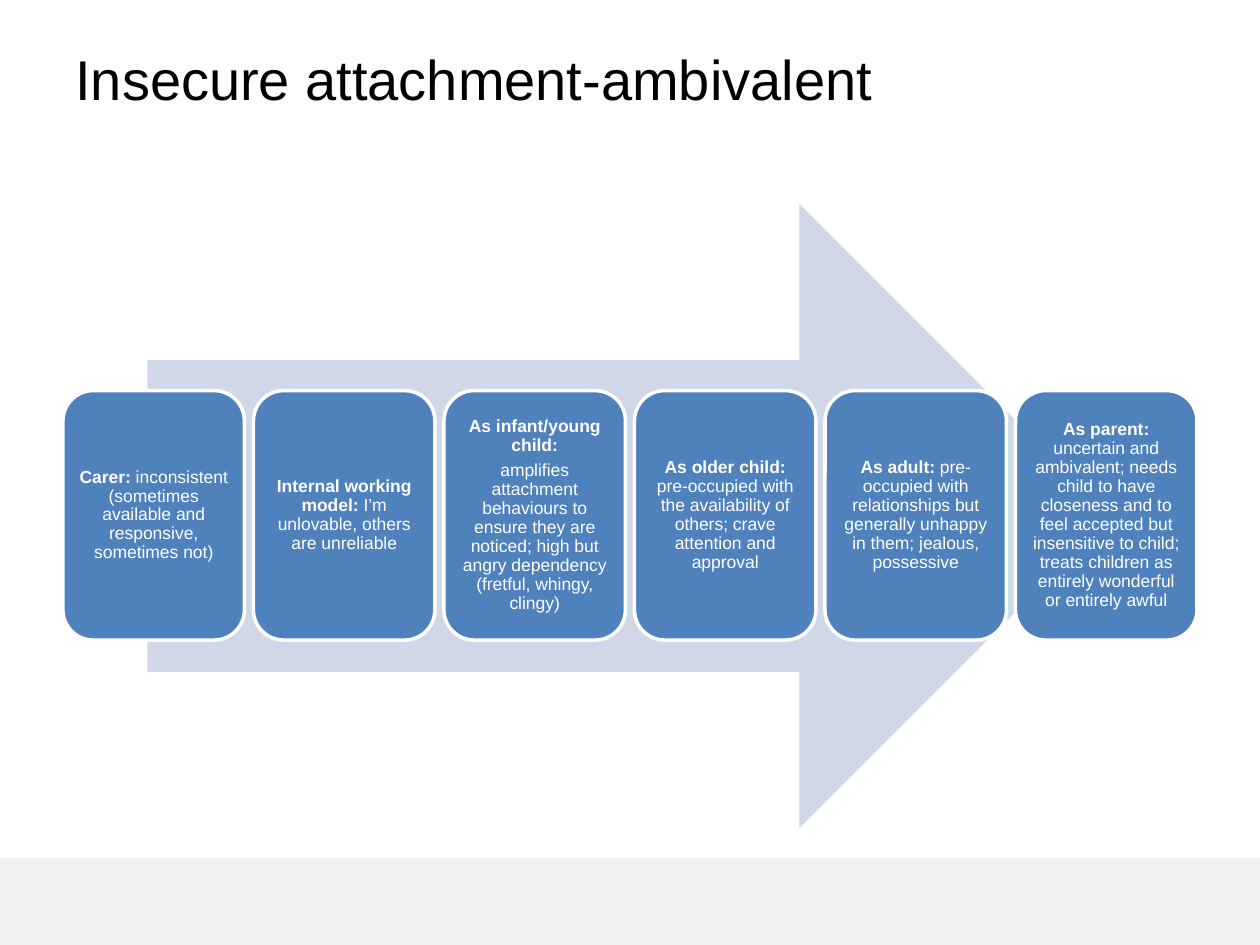
from pptx import Presentation
from pptx.dml.color import RGBColor
from pptx.enum.shapes import MSO_SHAPE
from pptx.enum.text import MSO_ANCHOR, PP_ALIGN
from pptx.util import Inches, Pt

COLORS = {
    "band": "F2F2F2",
    "arrow": "D0D8E8",
    "card": "4F81BD",
    "white": "FFFFFF",
    "title": "000000",
}
FONT = "Arial"
CARD_LEFT, CARD_TOP = 0.5, 3.1
CARD_WIDTH, CARD_HEIGHT = 1.44, 1.98
CARDS_RIGHT = 9.5
CARD_MARGIN = Inches(0.04)
CARD_FRAME = {
    "word_wrap": True,
    "vertical_anchor": MSO_ANCHOR.MIDDLE,
    "margin_left": CARD_MARGIN,
    "margin_right": CARD_MARGIN,
    "margin_top": CARD_MARGIN,
    "margin_bottom": CARD_MARGIN,
}
CARD_PARAGRAPH = {
    "alignment": PP_ALIGN.CENTER,
    "line_spacing": 0.9,
    "space_after": Pt(3.5),
}

# Each card is a list of paragraphs; each paragraph is a list of (text, bold)
CARDS = [
    [[("Carer:", True),
      (" inconsistent (sometimes available and responsive, sometimes not)", False)]],
    [[("Internal working model:", True),
      (" I’m unlovable, others are unreliable", False)]],
    [[("As infant/young child:", True)],
     [("amplifies attachment behaviours to ensure they are noticed; "
       "high but angry dependency (fretful, whingy, clingy)", False)]],
    [[("As older child:", True),
      (" pre-occupied with the availability of others; "
       "crave attention and approval", False)]],
    [[("As adult:", True),
      (" pre-occupied with relationships but generally unhappy in them; "
       "jealous, possessive", False)]],
    [[("As parent:", True),
      (" uncertain and ambivalent; needs child to have closeness and to feel "
       "accepted but insensitive to child; treats children as entirely "
       "wonderful or entirely awful", False)]],
]


def set_values(target, values):
    for name, value in values.items():
        setattr(target, name, value)


def color(name):
    return RGBColor.from_string(COLORS[name])


def add_run(paragraph, text, size, color_name, bold=False):
    run = paragraph.add_run()
    run.text = text
    set_values(run.font, {"name": FONT, "size": Pt(size), "bold": bold})
    run.font.color.rgb = color(color_name)


def add_filled_shape(slide, kind, box, fill):
    shape = slide.shapes.add_shape(kind, *(Inches(length) for length in box))
    shape.shadow.inherit = False
    shape.fill.solid()
    shape.fill.fore_color.rgb = color(fill)
    shape.line.fill.background()
    return shape


def add_title(slide, text):
    box = slide.shapes.add_textbox(Inches(0.5), Inches(0.3), Inches(9), Inches(1.25))
    box.text_frame.word_wrap = True
    add_run(box.text_frame.paragraphs[0], text, 32, "title")


def add_card(slide, left, paragraphs):
    card = add_filled_shape(slide, MSO_SHAPE.ROUNDED_RECTANGLE,
                            (left, CARD_TOP, CARD_WIDTH, CARD_HEIGHT), "card")
    card.line.color.rgb = color("white")
    card.line.width = Pt(2)
    frame = card.text_frame
    set_values(frame, CARD_FRAME)
    for index, runs in enumerate(paragraphs):
        paragraph = frame.add_paragraph() if index else frame.paragraphs[0]
        set_values(paragraph, CARD_PARAGRAPH)
        for text, bold in runs:
            add_run(paragraph, text, 10, "white", bold)


def main():
    presentation = Presentation()
    presentation.slide_width = Inches(10)
    presentation.slide_height = Inches(7.5)
    slide = presentation.slides.add_slide(presentation.slide_layouts[6])

    # Footer band and background arrow
    add_filled_shape(slide, MSO_SHAPE.RECTANGLE, (0, 6.81, 10, 0.69), "band")
    add_filled_shape(slide, MSO_SHAPE.RIGHT_ARROW, (1.17, 1.62, 7.65, 4.95), "arrow")

    # Evenly spaced stage cards
    pitch = (CARDS_RIGHT - CARD_WIDTH - CARD_LEFT) / (len(CARDS) - 1)
    for index, paragraphs in enumerate(CARDS):
        add_card(slide, CARD_LEFT + index * pitch, paragraphs)

    # Title
    add_title(slide, "Insecure attachment-ambivalent")

    presentation.save("out.pptx")


if __name__ == "__main__":
    main()
